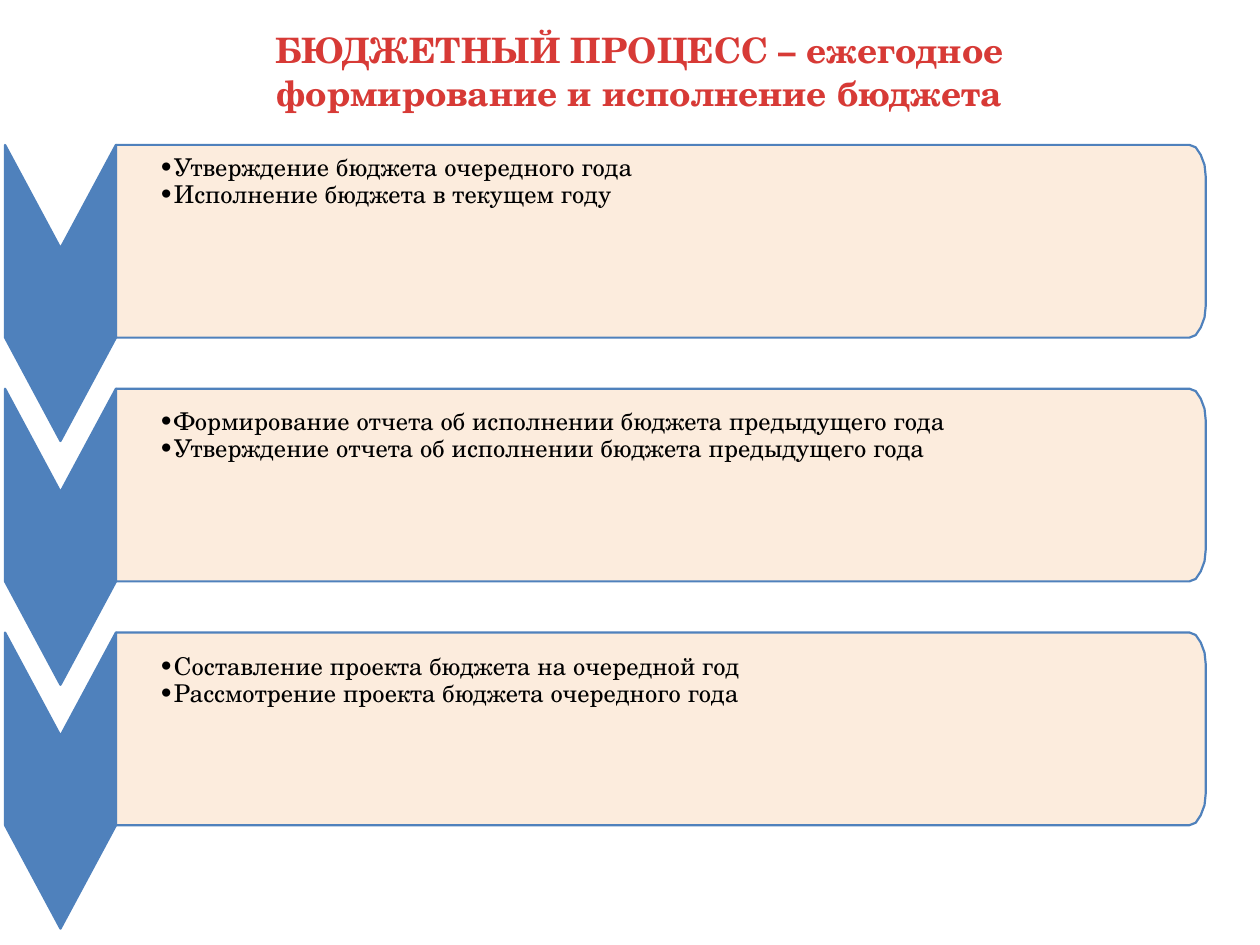
import pptx
import pptx.dml.color
import pptx.enum.text
import pptx.oxml.ns
import pptx.util
from lxml import etree

Inches, Pt = pptx.util.Inches, pptx.util.Pt

TITLE = "БЮДЖЕТНЫЙ ПРОЦЕСС – ежегодное формирование и исполнение бюджета"

# Space before the stage's first line in points, then its lines
STAGES = [
    (1.1, ["Утверждение бюджета очередного года",
           "Исполнение бюджета в текущем году"]),
    (114, ["Формирование отчета об исполнении бюджета предыдущего года",
           "Утверждение отчета об исполнении бюджета предыдущего года"]),
    (109, ["Составление проекта бюджета на очередной год",
           "Рассмотрение проекта бюджета очередного года"]),
]

THEME = {
    "font": "TeX Gyre Schola",
    "title": "D73A36", "text": "000000", "blue": "4F81BC", "card": "FCEADA",
    "card_alpha": 90, "title_size": 20, "text_size": 14,
    "leading": 15.6, "line": 1.25,
}

FIRST_TOP, LAST_TOP = 1.15, 5.02
CHEVRON_LEFT, CARD_LEFT, CARD_RIGHT = 0.04, 0.92, 9.57
CARD_HEIGHT, TIP = 1.53, 0.82
# Rounded corner as (inset from right, inset from top)
CORNER = [(0.13, 0), (0.08, 0.02), (0.04, 0.08), (0.01, 0.16), (0, 0.26)]


def rgb(name):
    return pptx.dml.color.RGBColor.from_string(THEME[name])


def add_outline(slide, points, fill, alpha=100):
    """Closed polygon through points in inches, with the blue line."""
    start, *rest = [(Inches(x), Inches(y)) for x, y in points]
    fb = slide.shapes.build_freeform(*start)
    fb.add_line_segments(rest, close=True)
    sp = fb.convert_to_shape()
    sp.shadow.inherit = False
    sp.fill.solid()
    sp.fill.fore_color.rgb = rgb(fill)
    sp.line.color.rgb = rgb("blue")
    sp.line.width = Pt(THEME["line"])
    if alpha < 100:
        clr = sp.fill._xPr.find(".//" + pptx.oxml.ns.qn("a:srgbClr"))
        etree.SubElement(clr, pptx.oxml.ns.qn("a:alpha"), val=str(alpha * 1000))


def add_chevron(slide, top):
    middle = (CHEVRON_LEFT + CARD_LEFT) / 2
    bottom = top + CARD_HEIGHT
    add_outline(slide, [
        (CARD_LEFT, top), (CARD_LEFT, bottom), (middle, bottom + TIP),
        (CHEVRON_LEFT, bottom), (CHEVRON_LEFT, top), (middle, top + TIP),
    ], "blue")


def add_card(slide, top):
    bottom = top + CARD_HEIGHT
    upper = [(CARD_RIGHT - dx, top + dy) for dx, dy in CORNER]
    lower = [(CARD_RIGHT - dx, bottom - dy) for dx, dy in reversed(CORNER)]
    add_outline(slide, [(CARD_LEFT, top), *upper, *lower, (CARD_LEFT, bottom)],
                "card", THEME["card_alpha"])


def add_text_frame(slide, left, top, width, height):
    tf = slide.shapes.add_textbox(*map(Inches, (left, top, width, height))).text_frame
    tf.word_wrap = True
    tf.margin_left = tf.margin_right = tf.margin_bottom = 0
    tf.margin_top = Inches(0.01)
    return tf


def style(p, size, color, bold=False):
    font = p.runs[0].font
    font.name, font.size, font.bold = THEME["font"], Pt(THEME[size]), bold
    font.color.rgb = rgb(color)


def add_bullet(p):
    pPr = p._p.get_or_add_pPr()
    pPr.set("marL", str(Inches(0.14)))
    pPr.set("indent", str(-Inches(0.12)))
    etree.SubElement(pPr, pptx.oxml.ns.qn("a:buFont"), typeface=THEME["font"])
    etree.SubElement(pPr, pptx.oxml.ns.qn("a:buChar"), char="•")


def add_stage_text(slide):
    tf = add_text_frame(slide, 1.24, 1.21, 8.19, 5.01)
    lines = [(text, gap if i == 0 else 0)
             for gap, texts in STAGES for i, text in enumerate(texts)]
    tf.text = "\n".join(text for text, _ in lines)
    for p, (_, gap) in zip(tf.paragraphs, lines):
        p.line_spacing = Pt(THEME["leading"])
        p.space_before = Pt(gap)
        add_bullet(p)
        style(p, "text_size", "text")


def add_title(slide):
    tf = add_text_frame(slide, 1.69, 0.22, 6.77, 0.99)
    tf.text = TITLE
    p = tf.paragraphs[0]
    p.alignment = pptx.enum.text.PP_ALIGN.CENTER
    p.space_before = Pt(1)
    style(p, "title_size", "title", bold=True)


def main():
    prs = pptx.Presentation()
    prs.slide_width, prs.slide_height = Inches(10), Inches(7.5)
    slide = prs.slides.add_slide(prs.slide_layouts[6])
    pitch = (LAST_TOP - FIRST_TOP) / (len(STAGES) - 1)
    for i in range(len(STAGES)):
        top = FIRST_TOP + i * pitch
        add_chevron(slide, top)
        add_card(slide, top)
    add_stage_text(slide)
    add_title(slide)
    prs.save("out.pptx")


if __name__ == "__main__":
    main()
